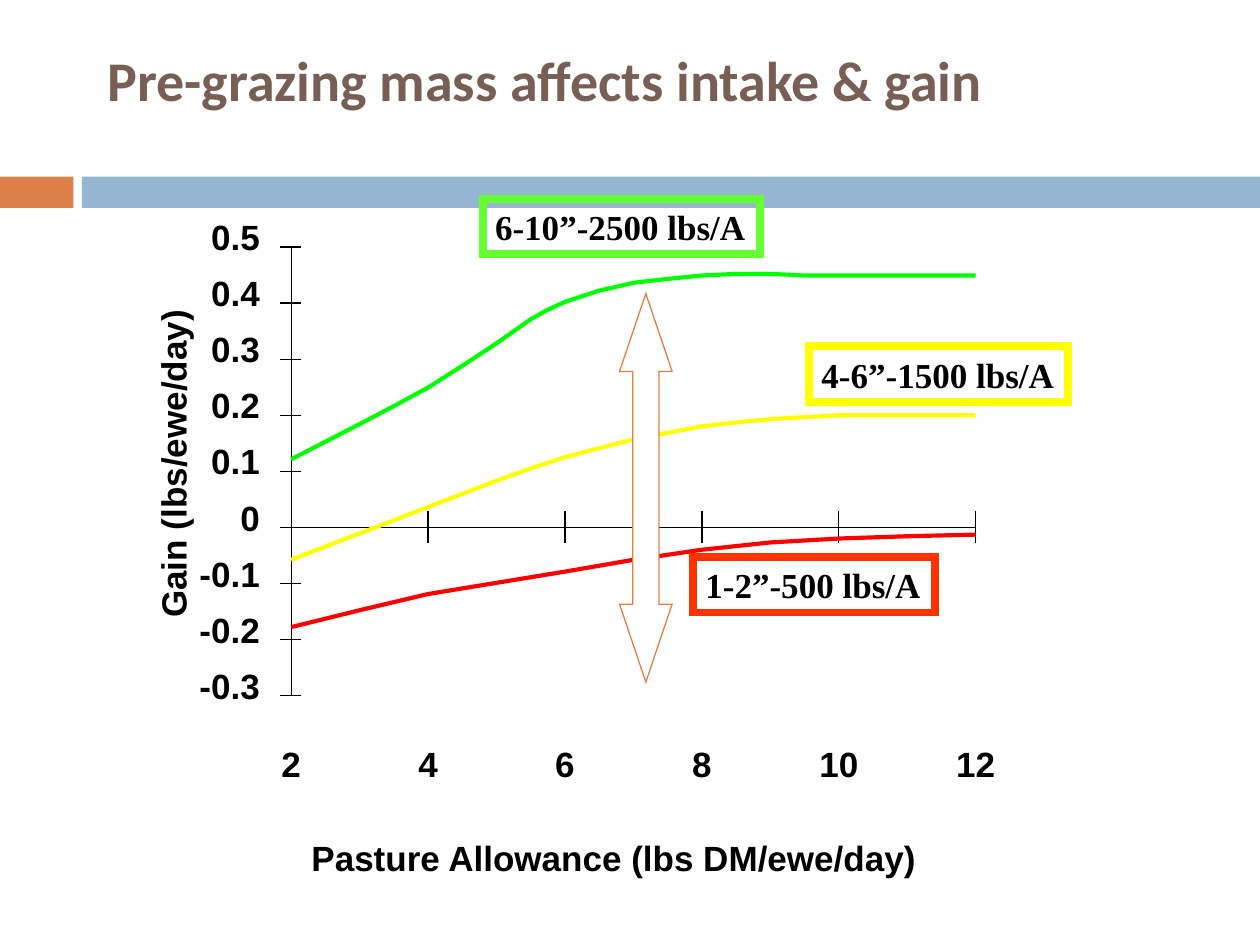
import pptx
import pptx.dml.color
import pptx.enum.shapes
import pptx.enum.text
import pptx.oxml.ns
import pptx.util
from lxml import etree

Cm, Pt = pptx.util.Cm, pptx.util.Pt
RGBColor = pptx.dml.color.RGBColor
Shape = pptx.enum.shapes.MSO_SHAPE
Align = pptx.enum.text.PP_ALIGN
Anchor = pptx.enum.text.MSO_ANCHOR
qn = pptx.oxml.ns.qn

BLACK = RGBColor(0x00, 0x00, 0x00)
WHITE = RGBColor(0xFF, 0xFF, 0xFF)
BROWN = RGBColor(0x77, 0x5F, 0x55)
ORANGE = RGBColor(0xDD, 0x80, 0x47)
BLUE = RGBColor(0x94, 0xB6, 0xD2)
RED = RGBColor(0xFF, 0x00, 0x00)
YELLOW = RGBColor(0xFF, 0xFF, 0x00)
GREEN = RGBColor(0x00, 0xFF, 0x00)
LABEL_GREEN = RGBColor(0x66, 0xFF, 0x33)
LABEL_RED = RGBColor(0xFF, 0x33, 0x00)

# Plot scales: allowance in lbs, gain in hundredths of a lb, lengths in cm
AXIS_LEFT, ZERO_LEVEL = 5.87, 10.63
CM_PER_LB, CM_PER_HUNDREDTH = 1.38, 0.113
ALLOWANCES = range(2, 13, 2)
GAINS = range(-30, 51, 10)

# Each curve: colour and (allowance, gain) points
CURVES = [
    (RED, [(2, -17.8), (3, -14.8), (4, -11.9), (5, -9.9), (6, -7.9), (7, -5.8),
           (8, -4), (9, -2.7), (10, -2), (11, -1.6), (12, -1.3)]),
    (YELLOW, [(2, -5.8), (4, 3.6), (5, 8.3), (5.5, 10.5), (6, 12.5), (7, 15.7),
              (8, 18), (8.5, 18.7), (9, 19.3), (10, 20), (12, 20)]),
    (GREEN, [(2, 12.1), (3, 18.4), (3.5, 21.6), (4, 24.9), (4.5, 28.8),
             (5, 32.8), (5.5, 37.1), (5.75, 38.8), (6, 40.2), (6.5, 42.2),
             (7, 43.6), (7.5, 44.3), (8, 44.9), (8.5, 45.2), (9, 45.2),
             (9.5, 44.9), (12, 44.9)]),
]

# Each curve label: text, border colour, left, top, width
CURVE_LABELS = [
    ("6-10”-2500 lbs/A", LABEL_GREEN, 9.73, 4.01, 5.59),
    ("4-6”-1500 lbs/A", YELLOW, 16.31, 6.98, 5.23),
    ("1-2”-500 lbs/A", LABEL_RED, 13.97, 11.23, 4.88),
]


def plot_x(allowance):
    return AXIS_LEFT + (allowance - 2) * CM_PER_LB


def plot_y(gain):
    return ZERO_LEVEL - gain * CM_PER_HUNDREDTH


def set_font(para, name, size, color):
    para.font.name = name
    para.font.size = Pt(size)
    para.font.bold = True
    para.font.color.rgb = color


def add_title(slide, text):
    title = slide.shapes.title
    title.left, title.top = Cm(1.91), Cm(0)
    title.width, title.height = Cm(21.59), Cm(3.18)
    title.text_frame.text = text
    title.text_frame.vertical_anchor = Anchor.MIDDLE
    para = title.text_frame.paragraphs[0]
    para.alignment = Align.LEFT
    set_font(para, "Calibri", 32, BROWN)


def add_shape(slide, kind, left, top, width, height, fill=None, line=None, weight=0.75):
    shape = slide.shapes.add_shape(kind, Cm(left), Cm(top), Cm(width), Cm(height))
    shape.shadow.inherit = False
    if fill is None:
        shape.fill.background()
    else:
        shape.fill.solid()
        shape.fill.fore_color.rgb = fill
    if line is None:
        shape.line.fill.background()
    else:
        shape.line.color.rgb = line
        shape.line.width = Pt(weight)
        # Square corners on the outline
        outline = shape.element.spPr.find(qn("a:ln"))
        etree.SubElement(outline, qn("a:miter"), lim="800000")
    return shape


def add_axis_line(slide, x1, y1, x2, y2):
    line = slide.shapes.add_connector(
        pptx.enum.shapes.MSO_CONNECTOR.STRAIGHT, Cm(x1), Cm(y1), Cm(x2), Cm(y2))
    line.line.color.rgb = BLACK
    line.line.width = Pt(0.75)
    etree.SubElement(line.element.spPr, qn("a:effectLst"))


def add_curve(slide, color, points):
    spots = [(Cm(plot_x(allowance)), Cm(plot_y(gain))) for allowance, gain in points]
    builder = slide.shapes.build_freeform(*spots[0])
    builder.add_line_segments(spots[1:], close=False)
    curve = builder.convert_to_shape()
    curve.shadow.inherit = False
    curve.fill.background()
    curve.line.color.rgb = color
    curve.line.width = Pt(2.38)


def add_axis_text(slide, text, left, top, width, alignment=Align.CENTER):
    box = slide.shapes.add_textbox(Cm(left), Cm(top), Cm(width), Cm(0.86))
    frame = box.text_frame
    frame.margin_left = frame.margin_right = frame.margin_top = frame.margin_bottom = 0
    frame.word_wrap = False
    frame.text = text
    para = frame.paragraphs[0]
    para.alignment = alignment
    set_font(para, "Arial", 20, BLACK)
    return box


def add_range_arrow(slide, left, top, width, height, shaft_share, head_share):
    arrow = add_shape(slide, Shape.UP_DOWN_ARROW, left, top, width, height,
                      fill=WHITE, line=ORANGE)
    # Shaft width and head length, as shares of the arrow's width
    guides = arrow.element.spPr.find(qn("a:prstGeom")).find(qn("a:avLst"))
    for guide in list(guides):
        guides.remove(guide)
    for name, share in (("adj1", shaft_share), ("adj2", head_share)):
        etree.SubElement(guides, qn("a:gd"), name=name, fmla=f"val {round(share * 100000)}")


def add_curve_label(slide, text, color, left, top, width):
    label = add_shape(slide, Shape.RECTANGLE, left, top, width, 1.12, line=color, weight=4.5)
    label.text_frame.word_wrap = False
    label.text_frame.text = text
    para = label.text_frame.paragraphs[0]
    para.alignment = Align.LEFT
    set_font(para, "Times New Roman", 20, BLACK)


def add_axes(slide):
    # Gain axis
    add_axis_line(slide, AXIS_LEFT, plot_y(GAINS[-1]), AXIS_LEFT, plot_y(GAINS[0]))
    for gain in GAINS:
        y = plot_y(gain)
        add_axis_line(slide, 5.64, y, 6.07, y)
        width = 1.22 if gain < 0 else 0.99 if gain else 0.4
        add_axis_text(slide, f"{gain / 100:g}", 5.24 - width, y - 0.63, width, Align.RIGHT)

    # Allowance axis
    add_axis_line(slide, AXIS_LEFT, ZERO_LEVEL, plot_x(ALLOWANCES[-1]), ZERO_LEVEL)
    for allowance in ALLOWANCES:
        x = plot_x(allowance)
        add_axis_line(slide, x, ZERO_LEVEL + 0.32, x, ZERO_LEVEL - 0.32)
        width = 0.4 * len(str(allowance))
        add_axis_text(slide, str(allowance), x - width / 2, 14.96, width)

    # Axis titles
    add_axis_text(slide, "Pasture Allowance (lbs DM/ewe/day)", 6.24, 16.87, 12.27)
    add_axis_text(slide, "Gain (lbs/ewe/day)", 0.36, 8.92, 6.25).rotation = 270


def main():
    deck = pptx.Presentation()
    deck.slide_width, deck.slide_height = Cm(25.4), Cm(19.05)
    slide = deck.slides.add_slide(deck.slide_layouts[5])

    # Heading and band
    add_shape(slide, Shape.RECTANGLE, 0, 3.56, 1.48, 0.63, fill=ORANGE)
    add_shape(slide, Shape.RECTANGLE, 1.65, 3.56, 23.75, 0.63, fill=BLUE)
    add_title(slide, "Pre-grazing mass affects intake & gain")

    # Line plot
    add_axes(slide)
    for color, points in CURVES:
        add_curve(slide, color, points)

    # Range arrow and curve labels
    add_range_arrow(slide, 12.49, 5.92, 1.06, 7.83, shaft_share=0.5, head_share=1.48)
    for label in CURVE_LABELS:
        add_curve_label(slide, *label)

    deck.save("out.pptx")


if __name__ == "__main__":
    main()
